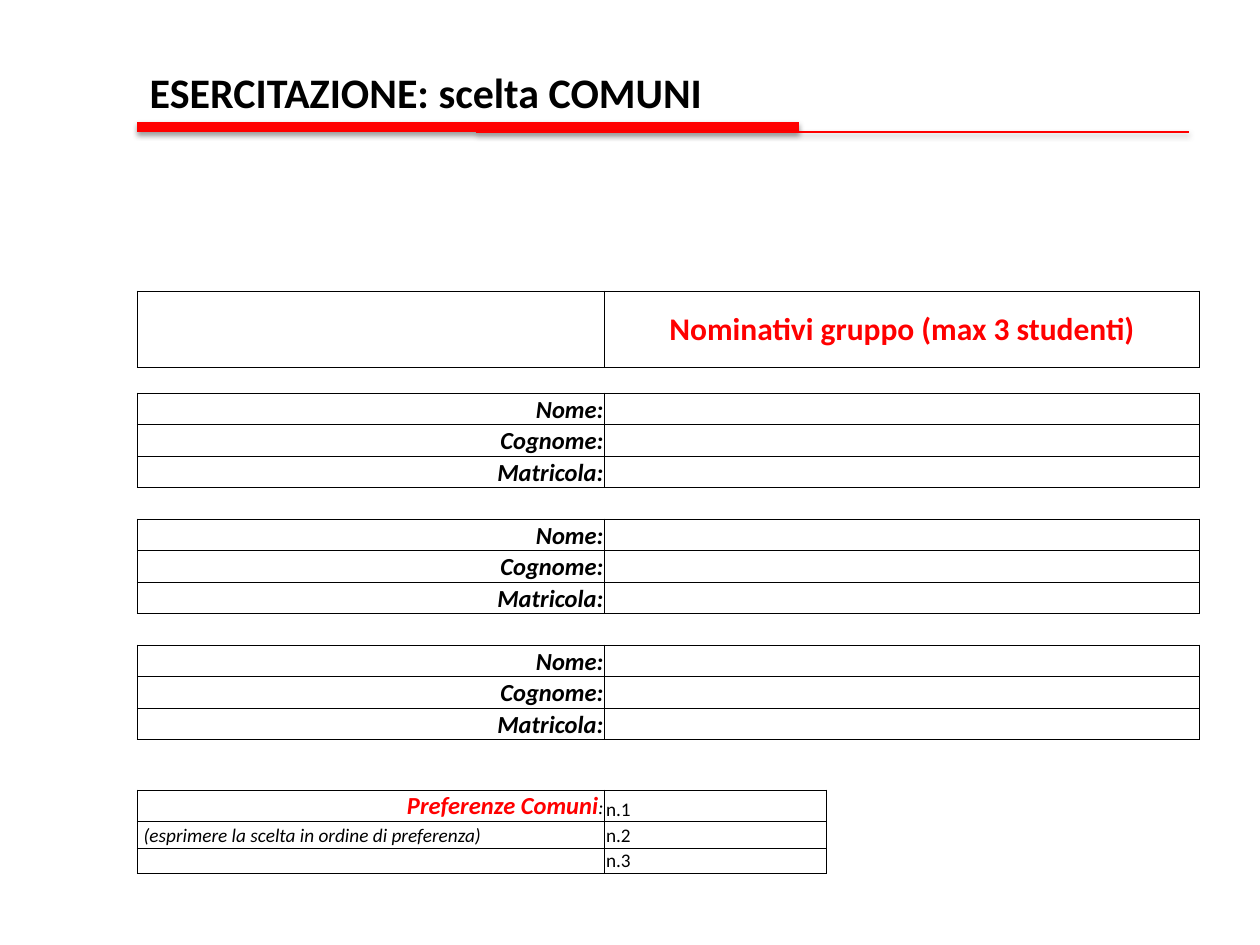
from lxml.etree import SubElement
from pptx import Presentation
from pptx.dml.color import RGBColor
from pptx.enum.shapes import MSO_CONNECTOR
from pptx.enum.text import MSO_ANCHOR, MSO_AUTO_SIZE, PP_ALIGN
from pptx.oxml import parse_xml
from pptx.oxml.ns import nsdecls, qn
from pptx.util import Inches, Pt

COLORS = {"ink": "000000", "accent": "FF0000"}
FONT = "Calibri"
TITLE = "ESERCITAZIONE: scelta COMUNI"
HEADING = "Nominativi gruppo (max 3 studenti)"
FIELDS = ["Nome:", "Cognome:", "Matricola:"]
GROUPS = 3
HINT = "(esprimere la scelta in ordine di preferenza)"
CHOICES = [("n.1", 0.25), ("n.2", 0.21), ("n.3", 0.2)]
RULES = [((1.09, 1.01), (6.34, 1.01), 6), ((3.78, 1.05), (9.44, 1.05), 1)]
COLUMNS = [3.71, 1.76] + [0.74] * 4
LAST = len(COLUMNS) - 1
NO_STYLE = "{2D5ABB26-0587-4C30-8999-92F81FD0307C}"


def plan_rows():
    rows = [("heading", None, 0.61), ("gap", None, 0.2)]
    for group in range(GROUPS):
        if group:
            rows.append(("gap", None, 0.25))
        rows += [("field", name, 0.25) for name in FIELDS]
    rows += [("gap", None, 0.2)] * 2
    return rows + [("choice", name, height) for name, height in CHOICES]


def add_span(para, text, size, color="ink", bold=False, italic=False):
    span = para.add_run()
    span.text = text
    span.font.name = FONT
    span.font.size = Pt(size)
    span.font.bold = bold
    span.font.italic = italic
    span.font.color.rgb = RGBColor.from_string(COLORS[color])


def draw_borders(cell):
    properties = cell._tc.get_or_add_tcPr()
    for index, side in enumerate(("lnL", "lnR", "lnT", "lnB")):
        properties.insert(index, parse_xml(
            f'<a:{side} {nsdecls("a")} w="{Pt(0.5)}"><a:solidFill>'
            f'<a:srgbClr val="{COLORS["ink"]}"/></a:solidFill></a:{side}>'))


def write_cell(cell, spans, align=PP_ALIGN.LEFT, anchor=MSO_ANCHOR.BOTTOM):
    cell.vertical_anchor = anchor
    para = cell.text_frame.paragraphs[0]
    para.alignment = align
    for span in spans:
        add_span(para, *span)


def prepare_cell(cell, boxed):
    cell.margin_left = cell.margin_right = cell.margin_top = Inches(0.01)
    cell.margin_bottom = 0
    cell.fill.background()
    if boxed:
        draw_borders(cell)


def add_form(page):
    rows = plan_rows()
    frame = page.shapes.add_table(
        len(rows), len(COLUMNS), Inches(1.09), Inches(2.31),
        Inches(sum(COLUMNS)), Inches(sum(row[2] for row in rows)))
    table = frame.table
    table.first_row = table.horz_banding = False
    table._tbl.tblPr.find(qn("a:tableStyleId")).text = NO_STYLE
    for column, width in zip(table.columns, COLUMNS):
        column.width = Inches(width)

    for index, (kind, text, height) in enumerate(rows):
        table.rows[index].height = Inches(height)
        boxed_columns = {"gap": 0, "choice": 2}.get(kind, len(COLUMNS))
        for column in range(len(COLUMNS)):
            prepare_cell(table.cell(index, column), column < boxed_columns)
        label, value = table.cell(index, 0), table.cell(index, 1)
        if kind in ("heading", "field"):
            value.merge(table.cell(index, LAST))
        if kind == "heading":
            write_cell(value, [(HEADING, 18, "accent", True)],
                       PP_ALIGN.CENTER, MSO_ANCHOR.MIDDLE)
        elif kind == "field":
            write_cell(label, [(text, 14, "ink", True, True)], PP_ALIGN.RIGHT)
        elif kind == "choice":
            write_cell(value, [(text, 11)])

    first_choice = len(rows) - len(CHOICES)
    write_cell(table.cell(first_choice, 0),
               [("Preferenze Comuni", 14, "accent", True, True),
                (":", 11, "ink", False, True)], PP_ALIGN.RIGHT)
    hint = table.cell(first_choice + 1, 0)
    write_cell(hint, [(HINT, 11, "ink", False, True)])
    hint.margin_left = Inches(0.05)

    for cell in table.iter_cells():
        para = cell.text_frame.paragraphs[0]
        if not para.runs:
            SubElement(para._p, qn("a:endParaRPr"), sz="800")


def add_rule(page, start, end, weight):
    rule = page.shapes.add_connector(
        MSO_CONNECTOR.STRAIGHT, *map(Inches, start + end))
    rule.line.color.rgb = RGBColor.from_string(COLORS["accent"])
    rule.line.width = Pt(weight)
    rule._element.spPr.append(parse_xml(
        f'<a:effectLst {nsdecls("a")}><a:outerShdw blurRad="{Pt(3.1)}" '
        f'dist="{Pt(1.6)}" dir="5400000" rotWithShape="0">'
        f'<a:srgbClr val="{COLORS["ink"]}"><a:alpha val="38000"/>'
        '</a:srgbClr></a:outerShdw></a:effectLst>'))


def add_title(page):
    box = page.shapes.add_textbox(
        Inches(1.09), Inches(0.48), Inches(4.67), Inches(0.5))
    box.text_frame.word_wrap = False
    box.text_frame.auto_size = MSO_AUTO_SIZE.SHAPE_TO_FIT_TEXT
    add_span(box.text_frame.paragraphs[0], TITLE, 24, bold=True)


def main():
    deck = Presentation()
    deck.slide_width, deck.slide_height = Inches(10), Inches(7.5)
    page = deck.slides.add_slide(deck.slide_layouts[6])
    add_form(page)
    for rule in RULES:
        add_rule(page, *rule)
    add_title(page)
    deck.save("out.pptx")


if __name__ == "__main__":
    main()
